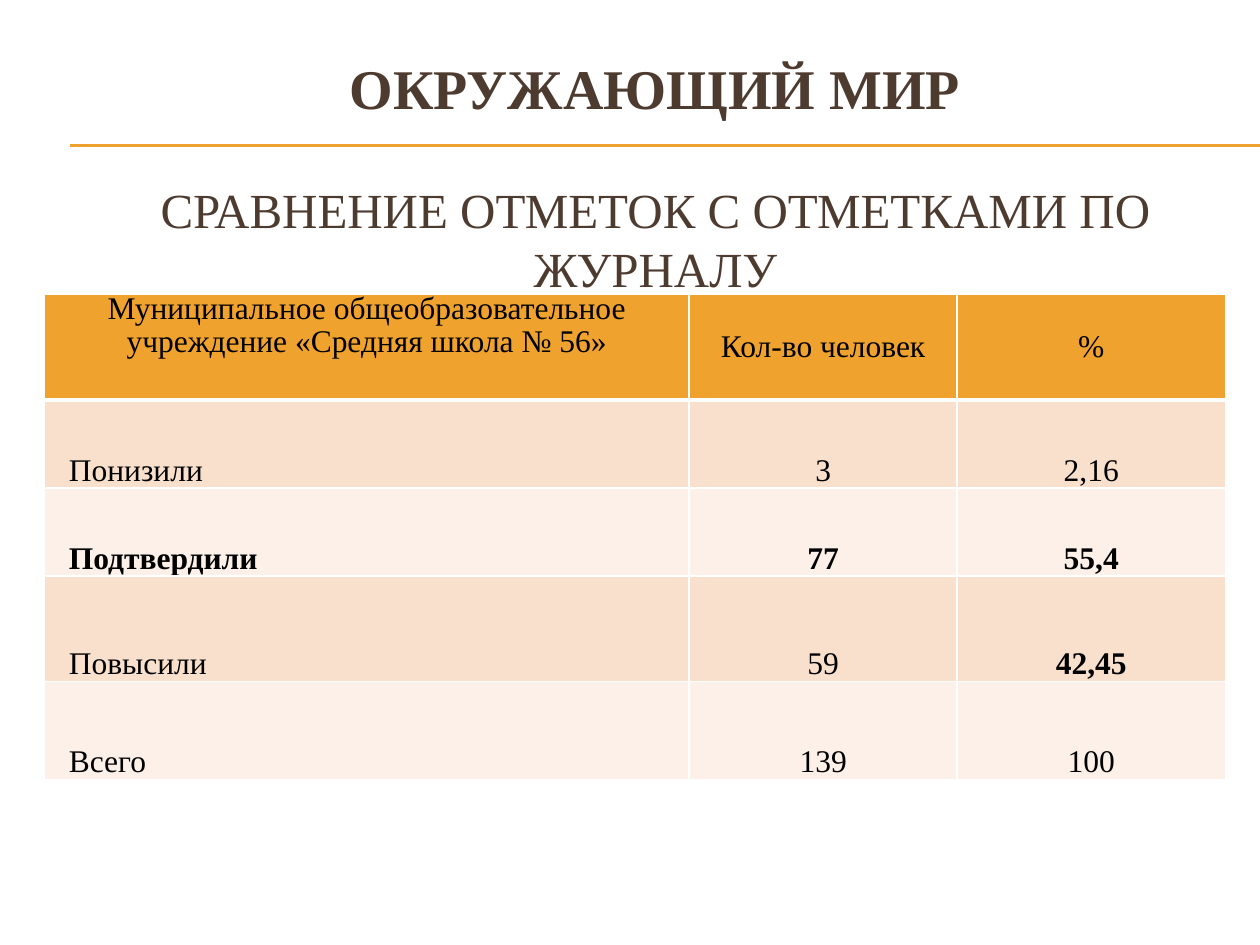
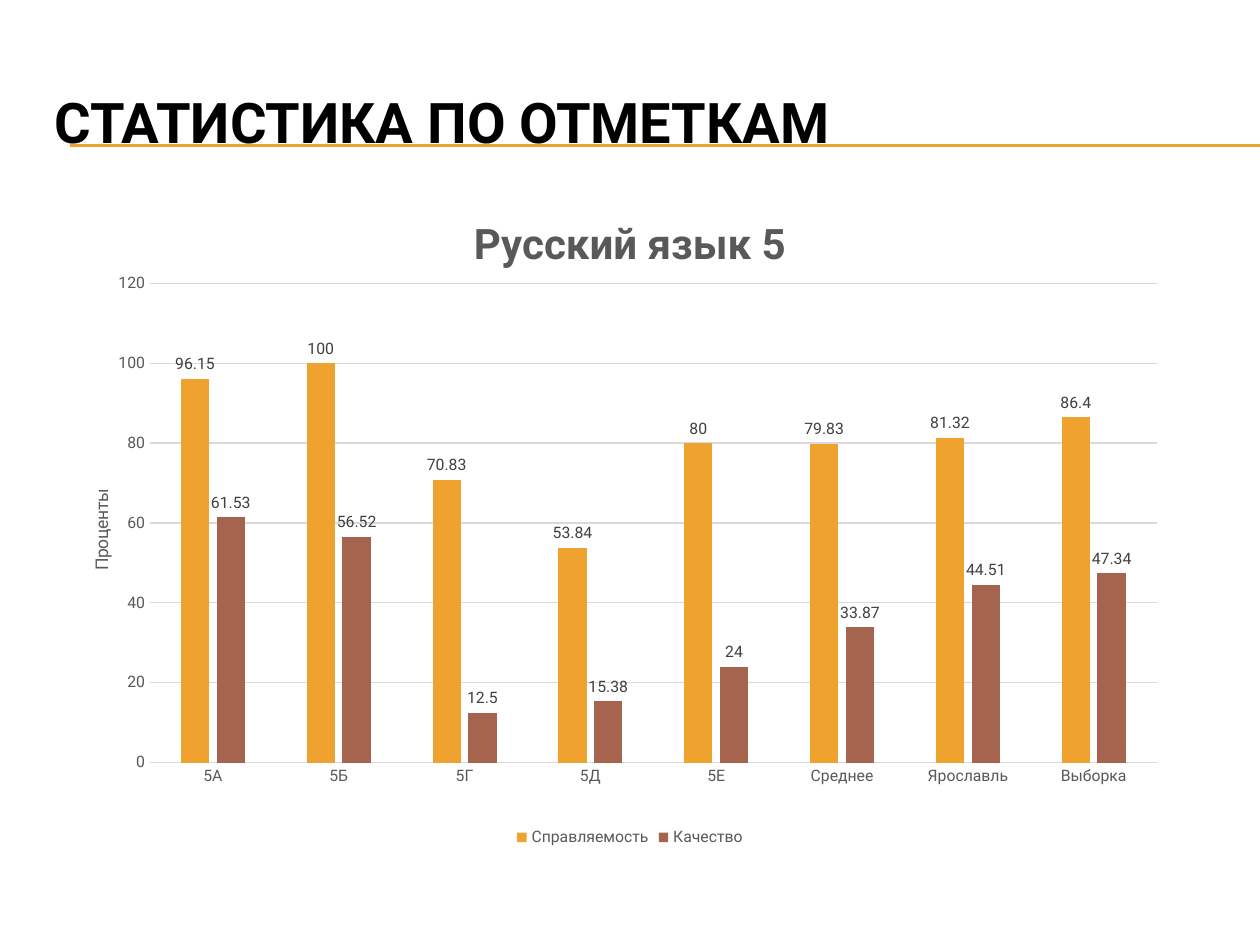
from lxml import etree
from pptx import Presentation
from pptx.chart import data as chart_data
from pptx.dml import color
from pptx.enum import chart as chart_enum, shapes, text
from pptx.oxml import ns, parse_xml
from pptx.util import Pt

# Content
HEADING = "ОКРУЖАЮЩИЙ МИР"
SUBHEADING = "СРАВНЕНИЕ ОТМЕТОК С ОТМЕТКАМИ ПО ЖУРНАЛУ"
TABLE_HEADER = ("Муниципальное общеобразовательное учреждение «Средняя школа № 56»",
                "Кол-во человек", "%")
TABLE_ROWS = [
    ("Понизили", "3", "2,16"),
    ("Подтвердили", "77", "55,4"),
    ("Повысили", "59", "42,45"),
    ("Всего", "139", "100"),
]
BOLD_CELLS = {(2, 0), (2, 1), (2, 2), (3, 2)}

STATISTICS_TITLE = "СТАТИСТИКА ПО ОТМЕТКАМ"
CHART_TITLE = "Русский язык 5"
VALUE_TITLE = "Проценты"
CLASSES = ["5А", "5Б", "5Г", "5Д", "5Е", "Среднее", "Ярославль", "Выборка"]
SERIES = [
    ("Справляемость", "orange", [96.15, 100, 70.83, 53.84, 80, 79.83, 81.32, 86.4]),
    ("Качество", "brown", [61.53, 56.52, 12.5, 15.38, 24, 33.87, 44.51, 47.34]),
]

# Shared look
COLORS = {
    "white": "FFFFFF", "black": "000000", "orange": "F0A22E", "brown": "A5644E",
    "heading": "4E3B30", "band_dark": "F9E0CD", "band_light": "FCF0E8",
    "label": "404040", "axis": "595959", "grid": "D9D9D9",
}
SERIF, SANS = "Times New Roman", "Roboto"
SLIDE_WIDTH, SLIDE_HEIGHT = 720, 540
RULE_LEFT, RULE_TOPS = 40.3, (82.8, 83.5)
COLUMN_WIDTHS = (368.4, 153.2, 153.2)
ROW_HEIGHTS = (60.6, 50.3, 50.3, 60.4, 55.8)
CELL_MARGIN, LABEL_INDENT = 5, 9
CENTER, LEFT = text.PP_ALIGN.CENTER, text.PP_ALIGN.LEFT


def rgb(name):
    return color.RGBColor.from_string(COLORS[name])


def style_font(font, size, color_name, name=SANS, bold=False):
    font.size, font.name, font.bold = Pt(size), name, bold
    font.color.rgb = rgb(color_name)


def write(paragraph, words, *, size, color_name, name=SANS, bold=False,
          align=LEFT, spacing=None, before=0):
    run = paragraph.add_run()
    run.text = words
    style_font(run.font, size, color_name, name, bold)
    paragraph.alignment = align
    paragraph.space_before = Pt(before)
    if spacing:
        paragraph.line_spacing = spacing


def add_text_frame(slide, left, top, width, height, anchor):
    frame = slide.shapes.add_textbox(Pt(left), Pt(top), Pt(width), Pt(height)).text_frame
    frame.word_wrap = True
    frame.vertical_anchor = anchor
    return frame


def add_ruled_slide(presentation):
    """Blank slide with the double rule under the title."""
    slide = presentation.slides.add_slide(presentation.slide_layouts[6])
    for top in RULE_TOPS:
        rule = slide.shapes.add_connector(
            shapes.MSO_CONNECTOR.STRAIGHT,
            Pt(RULE_LEFT), Pt(top), Pt(SLIDE_WIDTH), Pt(top))
        rule.line.color.rgb = rgb("orange")
        rule.line.width = Pt(0.75)
        etree.SubElement(rule.element.spPr, ns.qn("a:effectLst"))
    return slide


def set_borders(cell, widths):
    """Draw white cell borders; widths maps each side to points."""
    properties = cell._tc.get_or_add_tcPr()
    for index, (side, width) in enumerate(widths.items()):
        properties.insert(index, parse_xml(
            f'<a:ln{side} {ns.nsdecls("a")} w="{Pt(width)}"><a:solidFill>'
            f'<a:srgbClr val="{COLORS["white"]}"/></a:solidFill></a:ln{side}>'))


def fill_cell(cell, words, row, column):
    header, label = row == 0, column == 0
    cell.margin_left = Pt(CELL_MARGIN + (LABEL_INDENT if label and not header else 0))
    cell.margin_right = Pt(CELL_MARGIN)
    cell.margin_top = cell.margin_bottom = 0
    if header:
        fill = "orange"
        cell.vertical_anchor = text.MSO_ANCHOR.TOP if label else text.MSO_ANCHOR.MIDDLE
        spacing = 0.93 if label else None
    else:
        fill = "band_dark" if row % 2 else "band_light"
        cell.vertical_anchor = text.MSO_ANCHOR.BOTTOM
        spacing = 1.07
    cell.fill.solid()
    cell.fill.fore_color.rgb = rgb(fill)
    set_borders(cell, {"L": 1, "R": 1, "T": 3 if row == 1 else 1, "B": 3 if header else 1})
    write(cell.text_frame.paragraphs[0], words, size=18, color_name="black", name=SERIF,
          bold=(row, column) in BOLD_CELLS, spacing=spacing,
          align=LEFT if label and not header else CENTER)


def add_marks_table(slide):
    rows = [TABLE_HEADER, *TABLE_ROWS]
    table = slide.shapes.add_table(
        len(rows), len(COLUMN_WIDTHS), Pt(25.4), Pt(168),
        Pt(sum(COLUMN_WIDTHS)), Pt(sum(ROW_HEIGHTS))).table
    for column, width in zip(table.columns, COLUMN_WIDTHS):
        column.width = Pt(width)
    for row, height in zip(table.rows, ROW_HEIGHTS):
        row.height = Pt(height)
    for row, values in enumerate(rows):
        for column, words in enumerate(values):
            fill_cell(table.cell(row, column), words, row, column)


def set_plot_layout(chart, left, top, width, height):
    """Fix the inner plot area as fractions of the chart."""
    plot_area = chart._chartSpace.chart.plotArea
    for old in plot_area.findall(ns.qn("c:layout")):
        plot_area.remove(old)
    settings = {"layoutTarget": "inner", "xMode": "edge", "yMode": "edge",
                "x": left, "y": top, "w": width, "h": height}
    parts = "".join(f'<c:{key} val="{value}"/>' for key, value in settings.items())
    plot_area.insert(0, parse_xml(
        f'<c:layout {ns.nsdecls("c")}><c:manualLayout>{parts}</c:manualLayout></c:layout>'))


def add_statistics_chart(slide):
    data = chart_data.CategoryChartData()
    data.categories = CLASSES
    for name, _, values in SERIES:
        data.add_series(name, values)
    chart = slide.shapes.add_chart(
        chart_enum.XL_CHART_TYPE.COLUMN_CLUSTERED,
        Pt(49.7), Pt(107.3), Pt(620.6), Pt(379.4), data).chart
    style_font(chart.font, 10, "black")
    write(chart.chart_title.text_frame.paragraphs[0], CHART_TITLE,
          size=24, color_name="axis", bold=True, align=CENTER)
    chart.chart_title.include_in_layout = False
    set_plot_layout(chart, 0.058, 0.144, 0.927, 0.722)

    # Legend
    chart.has_legend = True
    chart.legend.position = chart_enum.XL_LEGEND_POSITION.BOTTOM
    chart.legend.include_in_layout = False
    style_font(chart.legend.font, 9, "axis")

    # Axes
    categories, values = chart.category_axis, chart.value_axis
    for axis in (categories, values):
        axis.major_tick_mark = axis.minor_tick_mark = chart_enum.XL_TICK_MARK.NONE
        style_font(axis.tick_labels.font, 9, "axis")
    values.minimum_scale, values.maximum_scale, values.major_unit = 0, 120, 20
    values.format.line.fill.background()
    for line in (categories.format.line, values.major_gridlines.format.line):
        line.color.rgb = rgb("grid")
        line.width = Pt(0.75)
    write(values.axis_title.text_frame.paragraphs[0], VALUE_TITLE,
          size=10, color_name="axis", align=CENTER)

    # Columns and their labels
    plot = chart.plots[0]
    plot.vary_by_categories = False
    plot.gap_width, plot.overlap = 219, -27
    for series, (_, color_name, _) in zip(plot.series, SERIES):
        series.format.fill.solid()
        series.format.fill.fore_color.rgb = rgb(color_name)
        labels = series.data_labels
        labels.show_value = True
        labels.position = chart_enum.XL_LABEL_POSITION.OUTSIDE_END
        style_font(labels.font, 9, "label")


def build_comparison_slide(presentation):
    slide = add_ruled_slide(presentation)
    frame = add_text_frame(slide, 42.5, 27, 664, 141, text.MSO_ANCHOR.TOP)
    write(frame.paragraphs[0], HEADING, size=32, color_name="heading", name=SERIF,
          bold=True, align=CENTER)
    write(frame.add_paragraph(), SUBHEADING, size=28, color_name="heading", name=SERIF,
          align=CENTER, spacing=Pt(34), before=33)
    add_marks_table(slide)


def build_statistics_slide(presentation):
    slide = add_ruled_slide(presentation)
    frame = add_text_frame(slide, 24, 36, 684, 66, text.MSO_ANCHOR.MIDDLE)
    write(frame.paragraphs[0], STATISTICS_TITLE, size=32, color_name="black", bold=True)
    add_statistics_chart(slide)


def main():
    presentation = Presentation()
    presentation.slide_width, presentation.slide_height = Pt(SLIDE_WIDTH), Pt(SLIDE_HEIGHT)
    build_comparison_slide(presentation)
    build_statistics_slide(presentation)
    presentation.save("out.pptx")


if __name__ == "__main__":
    main()
